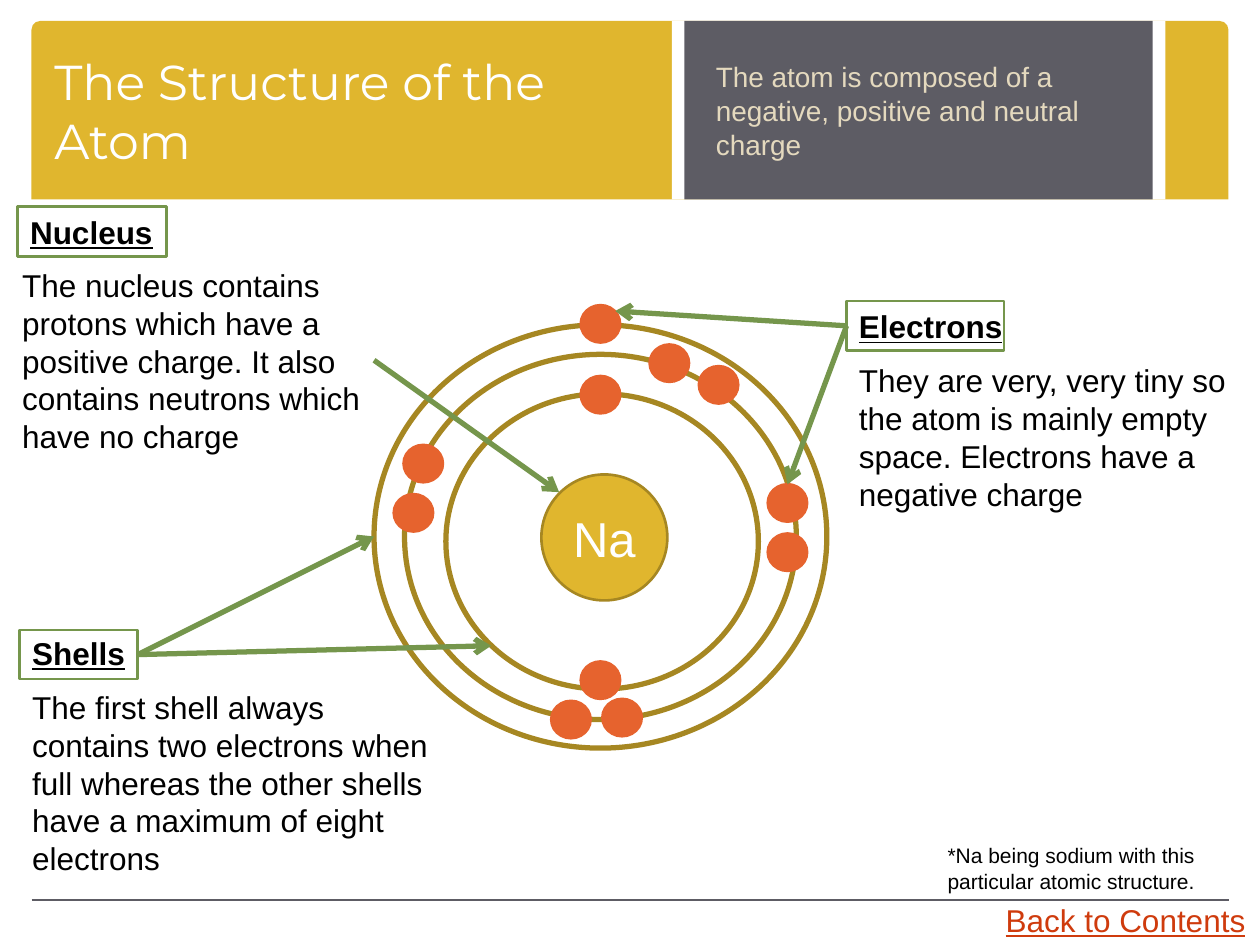
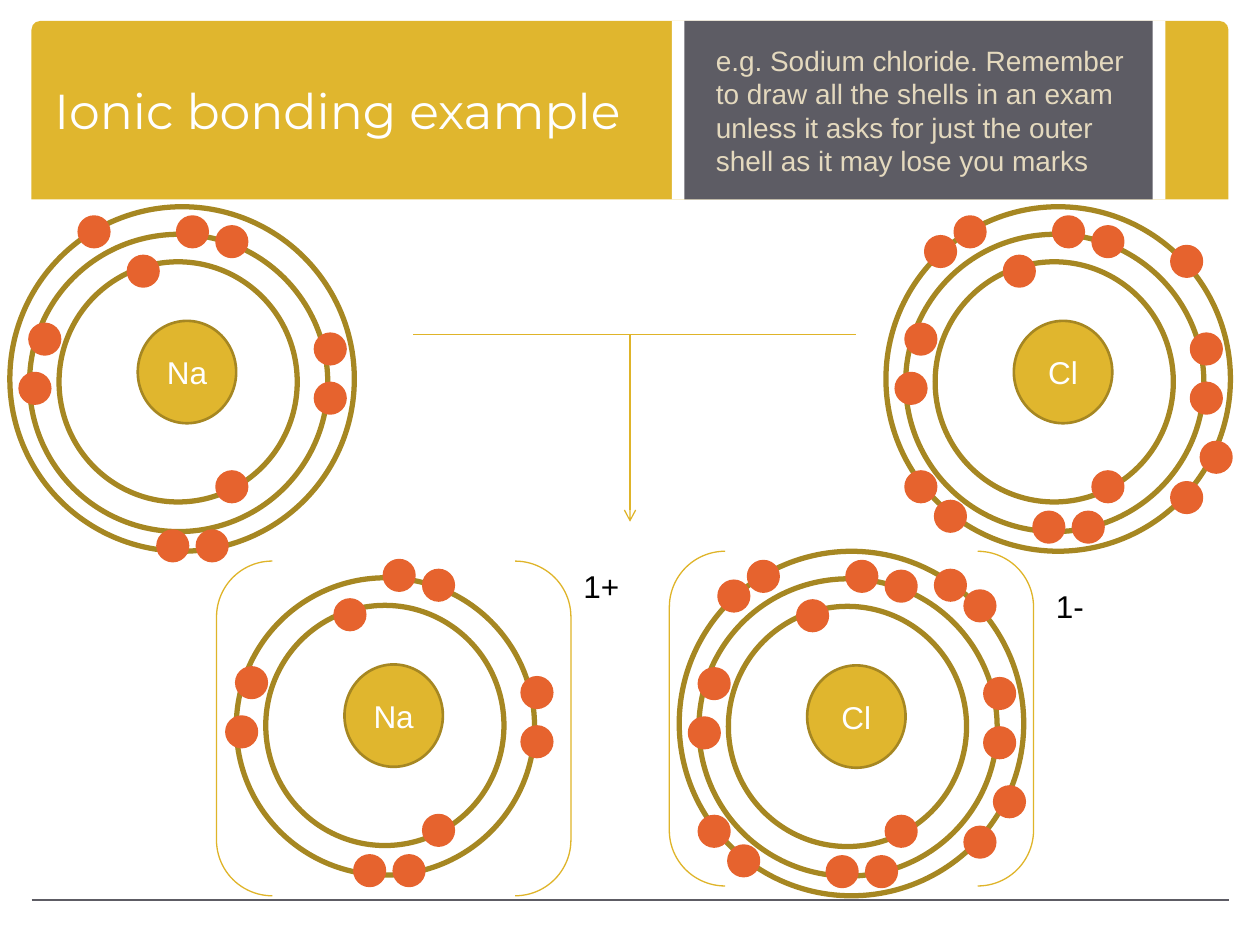
from typing import NamedTuple, Optional

import pptx
import pptx.dml.color
import pptx.enum.shapes
import pptx.enum.text
import pptx.oxml.ns
import pptx.util
from lxml import etree

COLUMNS, ROWS = 128, 96
WIDTH, HEIGHT = pptx.util.Inches(10), pptx.util.Inches(7.5)
SHAPE = pptx.enum.shapes.MSO_SHAPE
ANCHOR = pptx.enum.text.MSO_ANCHOR
ALIGN = pptx.enum.text.PP_ALIGN

COLORS = {
    "gold": "E0B62E", "dark gold": "A68722", "thin gold": "DFB429",
    "slate": "5D5C64", "sand": "E4D9BE", "orange": "E6632E",
    "green": "75964C", "link": "CF3B0D", "black": "000000", "white": "FFFFFF",
}

# Font name, size and other values of each kind of text, with its colour
STYLES = {
    "title": ("white", {"name": "Montserrat", "size": pptx.util.Pt(28)}),
    "summary": ("sand", {"name": "Arial", "size": pptx.util.Pt(16)}),
    "body": ("black", {"name": "Arial", "size": pptx.util.Pt(18)}),
    "heading": ("black", {"name": "Arial", "size": pptx.util.Pt(18),
                          "bold": True, "underline": True}),
    "note": ("black", {"name": "Arial", "size": pptx.util.Pt(12)}),
    "link": ("link", {"name": "Arial", "size": pptx.util.Pt(18), "underline": True}),
    "large symbol": ("white", {"name": "Arial", "size": pptx.util.Pt(28)}),
    "symbol": ("white", {"name": "Arial", "size": pptx.util.Pt(18)}),
}


class Area(NamedTuple):
    """A place in grid columns and rows."""
    col: float
    row: float
    cols: float
    rows: float

    def moved(self, cols: float, rows: float) -> "Area":
        return Area(self.col + cols, self.row + rows, self.cols, self.rows)


class Pen(NamedTuple):
    color: str
    points: float


class Line(NamedTuple):
    text: str
    style: str
    space_before: float = 0


class Atom(NamedTuple):
    """Shells and electrons are placed from the atom's own corner."""
    symbol: str
    symbol_style: str
    corner: tuple
    shells: list
    nucleus: Area
    electrons: list
    electron_size: tuple


SHELL_PEN = Pen("dark gold", 3)
NUCLEUS_PEN = Pen("dark gold", 1.5)
ELECTRON_PEN = Pen("orange", 1.5)
LABEL_PEN = Pen("green", 1.5)
POINTER_PEN = Pen("green", 3)
REACTION_PEN = Pen("thin gold", 0.75)


def across(cols: float) -> int:
    return round(WIDTH * cols / COLUMNS)


def down(rows: float) -> int:
    return round(HEIGHT * rows / ROWS)


def placed(area: Area) -> tuple:
    return across(area.col), down(area.row), across(area.cols), down(area.rows)


def rgb(name: str) -> pptx.dml.color.RGBColor:
    return pptx.dml.color.RGBColor.from_string(COLORS[name])


def write(box, lines: list, anchor=ANCHOR.TOP, align=ALIGN.LEFT, wrap: bool = True) -> None:
    frame = box.text_frame
    for name, value in {"word_wrap": wrap, "vertical_anchor": anchor}.items():
        setattr(frame, name, value)
    for index, line in enumerate(lines):
        para = frame.add_paragraph() if index else frame.paragraphs[0]
        para.alignment = align
        para.space_before = pptx.util.Pt(line.space_before)
        span = para.add_run()
        span.text = line.text
        color, values = STYLES[line.style]
        for name, value in values.items():
            setattr(span.font, name, value)
        span.font.color.rgb = rgb(color)


def add_text(page, area: Area, lines: list, **layout):
    box = page.shapes.add_textbox(*placed(area))
    write(box, lines, **layout)
    return box


def add_shape(page, kind, area: Area, fill: Optional[str] = None, pen: Optional[Pen] = None):
    shape = page.shapes.add_shape(kind, *placed(area))
    shape.shadow.inherit = False
    if fill:
        shape.fill.solid()
        shape.fill.fore_color.rgb = rgb(fill)
    else:
        shape.fill.background()
    if pen:
        shape.line.color.rgb = rgb(pen.color)
        shape.line.width = pptx.util.Pt(pen.points)
    else:
        shape.line.fill.background()
    return shape


def add_line(page, start: tuple, end: tuple, pen: Pen, arrow: bool = False):
    line = page.shapes.add_connector(
        pptx.enum.shapes.MSO_CONNECTOR.STRAIGHT,
        across(start[0]), down(start[1]), across(end[0]), down(end[1]))
    line.line.color.rgb = rgb(pen.color)
    line.line.width = pptx.util.Pt(pen.points)
    if arrow:
        etree.SubElement(line.line._get_or_add_ln(), pptx.oxml.ns.qn("a:tailEnd"), type="arrow")
    etree.SubElement(line._element.spPr, pptx.oxml.ns.qn("a:effectLst"))
    return line


def add_pointers(page, label, side: int, start: tuple, targets: list) -> None:
    """Draw arrows that leave one side of a label box."""
    for target in targets:
        add_line(page, start, target, POINTER_PEN, arrow=True).begin_connect(label, side)


def add_atom(page, atom: Atom) -> None:
    for shell in atom.shells:
        add_shape(page, SHAPE.OVAL, shell.moved(*atom.corner), pen=SHELL_PEN)
    nucleus = add_shape(page, SHAPE.OVAL, atom.nucleus.moved(*atom.corner), "gold", NUCLEUS_PEN)
    write(nucleus, [Line(atom.symbol, atom.symbol_style)], ANCHOR.MIDDLE, ALIGN.CENTER)
    for place in atom.electrons:
        area = Area(*place, *atom.electron_size).moved(*atom.corner)
        add_shape(page, SHAPE.OVAL, area, "orange", ELECTRON_PEN)


def add_page(deck, title: str, summary: str):
    """Add a page with the shared banner, footer rule, title and summary."""
    page = deck.slides.add_slide(deck.slide_layouts[6])
    banner = add_shape(page, SHAPE.ROUND_2_SAME_RECTANGLE, Area(3.2, 2.13, 121.6, 18.13), "gold")
    banner.adjustments[0] = 0.05
    add_line(page, (3.2, 91.43), (124.8, 91.43), Pen("slate", 1))
    add_shape(page, SHAPE.RECTANGLE, Area(68.27, 2.13, 50.13, 18.13), "white")
    add_shape(page, SHAPE.RECTANGLE, Area(69.53, 2.13, 47.57, 18.13), "slate")
    add_text(page, Area(4.27, 3.2, 62.93, 16), [Line(title, "title")], anchor=ANCHOR.MIDDLE)
    add_text(page, Area(71.47, 3.2, 44.8, 16), [Line(summary, "summary")], anchor=ANCHOR.MIDDLE)
    return page


def build_structure(deck) -> None:
    page = add_page(deck, "The Structure of the Atom",
                    "The atom is composed of a negative, positive and neutral charge")
    add_atom(page, Atom(
        "Na", "large symbol", (38, 33),
        [Area(0, 0, 46, 43), Area(3.1, 3, 39.8, 37.1), Area(7.3, 7, 31.75, 30)],
        Area(17, 15.2, 12.8, 12.8),
        [(21, -2), (21, 34.2), (21, 5.2), (3, 12.2), (2, 17.2), (23.2, 38),
         (28, 2), (33, 4.2), (18, 38.2), (40, 16.2), (40, 21.2)],
        (4, 3.8)))

    nucleus_label = add_shape(page, SHAPE.RECTANGLE, Area(1.8, 21, 15.1, 5.1), pen=LABEL_PEN)
    write(nucleus_label, [Line("Nucleus", "heading")], wrap=False)
    add_text(page, Area(1, 26.4, 37, 20.7), [Line(
        "The nucleus contains protons which have a positive charge. "
        "It also contains neutrons which have no charge", "body")])
    add_line(page, (38, 36.6), (56.8, 50), POINTER_PEN, arrow=True)

    add_text(page, Area(86, 30.6, 40, 22.4), [
        Line("Electrons", "heading"),
        Line("They are very, very tiny so the atom is mainly empty space. "
             "Electrons have a negative charge", "body", 9.2)])
    electrons_label = add_shape(page, SHAPE.RECTANGLE, Area(86, 30.6, 16, 5), pen=LABEL_PEN)
    add_pointers(page, electrons_label, 1, (86, 33.1), [(62.5, 31.6), (80, 49.2)])

    add_text(page, Area(2, 63.8, 44, 26.2), [
        Line("Shells", "heading"),
        Line("The first shell always contains two electrons when full whereas "
             "the other shells have a maximum of eight electrons", "body", 9.2)])
    shells_label = add_shape(page, SHAPE.RECTANGLE, Area(2, 64, 12, 5), pen=LABEL_PEN)
    add_pointers(page, shells_label, 3, (14, 66.5), [(38, 54.5), (49.9, 65.6)])

    add_text(page, Area(95, 85, 33, 6.5), [
        Line("*Na being sodium with this particular atomic structure.", "note")])
    add_text(page, Area(100.9, 90.9, 27.1, 5.1), [Line("Back to Contents", "link")], wrap=False)


def build_ionic_bonding(deck) -> None:
    page = add_page(deck, "Ionic bonding example",
                    "e.g. Sodium chloride. Remember to draw all the shells in an exam "
                    "unless it asks for just the outer shell as it may lose you marks")
    outer, middle, inner = (
        Area(0, 0, 35, 35), Area(2, 2.8, 30.3, 30.2), Area(5, 5.6, 24.2, 24.4))
    core = [(21, 2), (21, 26.9), (12, 5), (2, 11.9), (1, 16.9), (17, 1), (31, 12.9), (31, 17.9)]
    chlorine_outer = [(7, 1), (4, 3), (32, 23.9), (29, 28), (29, 4), (2, 26.9), (5, 29.9)]

    def add_particle(symbol: str, corner: tuple, shells: list, electrons: list) -> None:
        add_atom(page, Atom(symbol, "symbol", corner, shells, Area(13, 11.6, 10, 10.4),
                            core + electrons, (3.1, 3.1)))

    all_shells = [outer, middle, inner]
    add_particle("Na", (1, 21), all_shells, [(19, 32.9), (15, 32.9), (7, 1)])
    add_particle("Na", (22, 55.9), [middle, inner], [(18, 31), (14, 31)])

    add_line(page, (42, 34), (87, 34), REACTION_PEN)
    add_line(page, (64, 34), (64, 53), REACTION_PEN, arrow=True)
    for bracket in (Area(22, 57, 36, 34), Area(68, 56, 37, 34)):
        add_shape(page, SHAPE.DOUBLE_BRACKET, bracket, pen=REACTION_PEN)

    chlorine = [(19, 31), (15, 31)] + chlorine_outer
    add_particle("Cl", (90, 21), all_shells, chlorine)
    add_particle("Cl", (69, 56), all_shells, chlorine + [(26, 1.9)])

    for charge, area in (("1+", Area(58, 57, 6.3, 5.1)), ("1-", Area(106, 59, 5.5, 5.1))):
        add_text(page, area, [Line(charge, "body")], wrap=False)


def main() -> None:
    deck = pptx.Presentation()
    deck.slide_width, deck.slide_height = WIDTH, HEIGHT
    build_structure(deck)
    build_ionic_bonding(deck)
    deck.save("out.pptx")


if __name__ == "__main__":
    main()
